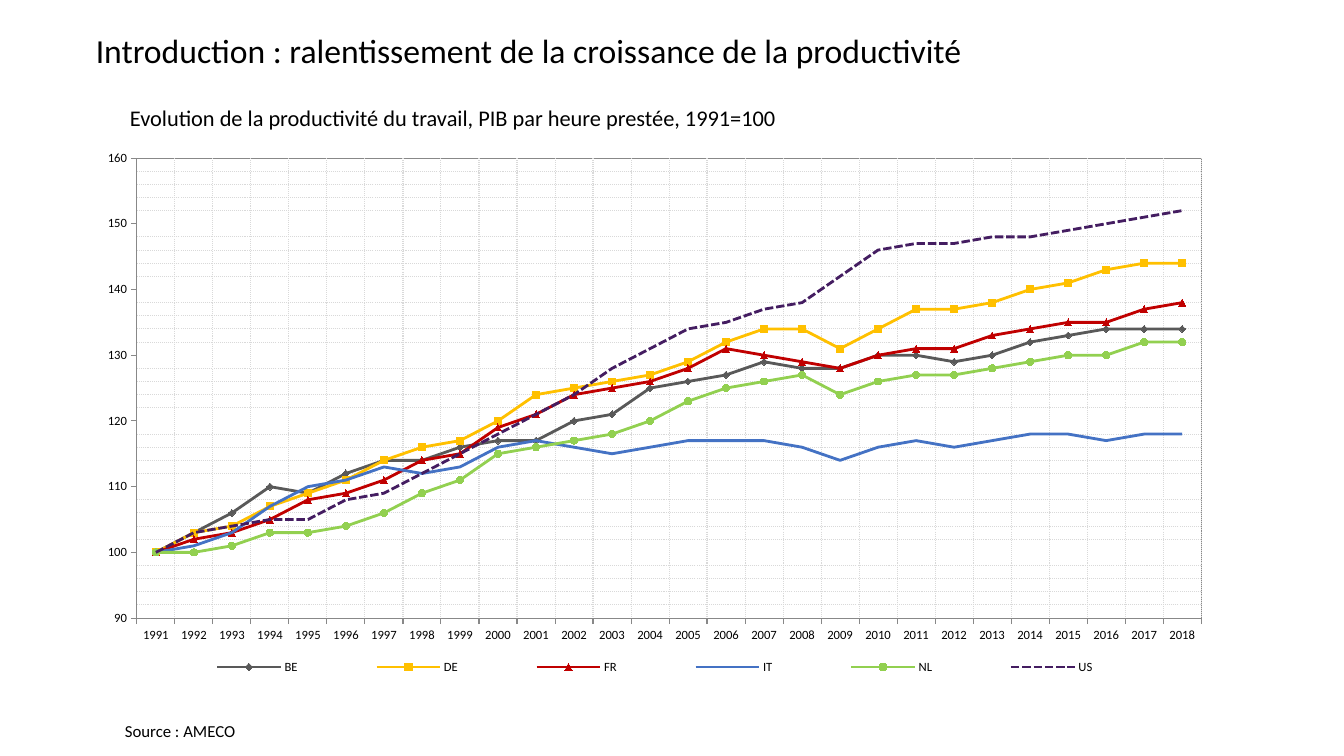
from copy import deepcopy

from lxml import etree
from pptx import Presentation
from pptx.chart.data import CategoryChartData
from pptx.dml.color import RGBColor
from pptx.enum.chart import XL_CHART_TYPE, XL_LEGEND_POSITION, XL_MARKER_STYLE, XL_TICK_MARK
from pptx.enum.dml import MSO_LINE
from pptx.enum.text import MSO_ANCHOR, PP_ALIGN
from pptx.oxml import parse_xml
from pptx.oxml.ns import nsdecls, qn
from pptx.util import Inches, Pt

FONT = "Calibri"
COLORS = {
    "text": "000000", "axis": "888888", "grid": "D9D9D9",
    "BE": "595959", "DE": "FFC000", "FR": "C00000",
    "IT": "4472C4", "NL": "92D050", "US": "441D61",
}
PRODUCTIVITY = {
    "BE": [100, 103, 106, 110, 109, 112, 114, 114, 116, 117, 117, 120, 121, 125,
           126, 127, 129, 128, 128, 130, 130, 129, 130, 132, 133, 134, 134, 134],
    "DE": [100, 103, 104, 107, 109, 111, 114, 116, 117, 120, 124, 125, 126, 127,
           129, 132, 134, 134, 131, 134, 137, 137, 138, 140, 141, 143, 144, 144],
    "FR": [100, 102, 103, 105, 108, 109, 111, 114, 115, 119, 121, 124, 125, 126,
           128, 131, 130, 129, 128, 130, 131, 131, 133, 134, 135, 135, 137, 138],
    "IT": [100, 101, 103, 107, 110, 111, 113, 112, 113, 116, 117, 116, 115, 116,
           117, 117, 117, 116, 114, 116, 117, 116, 117, 118, 118, 117, 118, 118],
    "NL": [100, 100, 101, 103, 103, 104, 106, 109, 111, 115, 116, 117, 118, 120,
           123, 125, 126, 127, 124, 126, 127, 127, 128, 129, 130, 130, 132, 132],
    "US": [100, 103, 104, 105, 105, 108, 109, 112, 115, 118, 121, 124, 128, 131,
           134, 135, 137, 138, 142, 146, 147, 147, 148, 148, 149, 150, 151, 152],
}
MARKERS = {
    "BE": XL_MARKER_STYLE.DIAMOND, "DE": XL_MARKER_STYLE.SQUARE,
    "FR": XL_MARKER_STYLE.TRIANGLE, "NL": XL_MARKER_STYLE.CIRCLE,
}


def write_text(shape, text, size):
    """Fill a shape with one left-aligned run and return its paragraph."""
    frame = shape.text_frame
    frame.word_wrap = True
    frame.vertical_anchor = MSO_ANCHOR.MIDDLE
    paragraph = frame.paragraphs[0]
    paragraph.alignment = PP_ALIGN.LEFT
    run = paragraph.add_run()
    run.text = text
    run.font.size = Pt(size)
    run.font.name = FONT
    run.font.color.rgb = RGBColor.from_string(COLORS["text"])
    return paragraph


def set_layout(parent, index, target, x, y, width, height):
    """Place a chart part by fractions of the chart's size."""
    for old_layout in parent.findall(qn("c:layout")):
        parent.remove(old_layout)
    layout = parse_xml(f"<c:layout {nsdecls('c')}><c:manualLayout/></c:layout>")
    settings = {"xMode": "edge", "yMode": "edge", "x": x, "y": y, "w": width, "h": height}
    if target:
        settings = {"layoutTarget": target, **settings}
    for name, value in settings.items():
        etree.SubElement(layout[0], qn(f"c:{name}")).set("val", str(value))
    parent.insert(index, layout)


presentation = Presentation()
presentation.slide_width = Inches(13.33)
presentation.slide_height = Inches(7.5)
slide = presentation.slides.add_slide(presentation.slide_layouts[5])

title = slide.shapes.title
title.left, title.top = Inches(0.85), Inches(0.25)
title.width, title.height = Inches(11.61), Inches(0.5)
write_text(title, "Introduction : ralentissement de la croissance de la productivité", 24)

subtitle = slide.shapes.add_textbox(Inches(1.19), Inches(0.98), Inches(7.61), Inches(0.37))
write_text(subtitle, "Evolution de la productivité du travail, PIB par heure prestée, 1991=100", 16)

source = slide.shapes.add_textbox(Inches(1.14), Inches(7.1), Inches(10.83), Inches(0.3))
write_text(source, "Source : AMECO", 12).space_after = Pt(12)

chart_data = CategoryChartData()
chart_data.categories = [str(year) for year in range(1991, 2019)]
for country, values in PRODUCTIVITY.items():
    chart_data.add_series(country, values)
chart = slide.shapes.add_chart(
    XL_CHART_TYPE.LINE_MARKERS, Inches(0.85), Inches(1.39), Inches(11.29), Inches(5.39), chart_data
).chart
chart.has_title = False
chart.font.size = Pt(9)
chart.font.name = FONT
chart.font.color.rgb = RGBColor.from_string(COLORS["text"])
chart.plots[0].vary_by_categories = False

for series in chart.plots[0].series:
    color = RGBColor.from_string(COLORS[series.name])
    series.smooth = False
    series.format.line.color.rgb = color
    series.format.line.width = Pt(2)
    series.marker.style = MARKERS.get(series.name, XL_MARKER_STYLE.NONE)
    if series.name in MARKERS:
        series.marker.size = 5
        series.marker.format.fill.solid()
        series.marker.format.fill.fore_color.rgb = color
        series.marker.format.line.color.rgb = color
    if series.name == "US":
        series.format.line.dash_style = MSO_LINE.SQUARE_DOT

years, index_axis = chart.category_axis, chart.value_axis
for axis in (years, index_axis):
    axis.major_tick_mark = XL_TICK_MARK.OUTSIDE
    axis.minor_tick_mark = XL_TICK_MARK.NONE
    axis.format.line.color.rgb = RGBColor.from_string(COLORS["axis"])
    axis.format.line.width = Pt(0.75)
index_axis.minimum_scale, index_axis.maximum_scale = 90, 160
index_axis.major_unit, index_axis.minor_unit = 10, 2
index_axis.has_major_gridlines = False
index_axis.has_minor_gridlines = True
years.has_major_gridlines = True
grid_line = years.major_gridlines.format.line
grid_line.color.rgb = RGBColor.from_string(COLORS["grid"])
grid_line.width = Pt(0.75)
grid_line.dash_style = MSO_LINE.ROUND_DOT

# The minor gridlines of the index share the style of the year gridlines.
plot_area = chart.element.find(".//" + qn("c:plotArea"))
grid_style = plot_area.find(".//" + qn("c:majorGridlines")).find(qn("c:spPr"))
plot_area.find(".//" + qn("c:minorGridlines")).append(deepcopy(grid_style))
plot_area.append(parse_xml(
    f'<c:spPr {nsdecls("c", "a")}><a:noFill/><a:ln w="9525"><a:solidFill>'
    f'<a:srgbClr val="{COLORS["axis"]}"/></a:solidFill></a:ln></c:spPr>'
))
set_layout(plot_area, 0, "inner", 0.045, 0.033, 0.935, 0.847)

chart.has_legend = True
chart.legend.position = XL_LEGEND_POSITION.BOTTOM
chart.legend.include_in_layout = False
set_layout(chart.element.find(".//" + qn("c:legend")), 1, None, 0.05, 0.945, 0.9, 0.05)

presentation.save("out.pptx")
